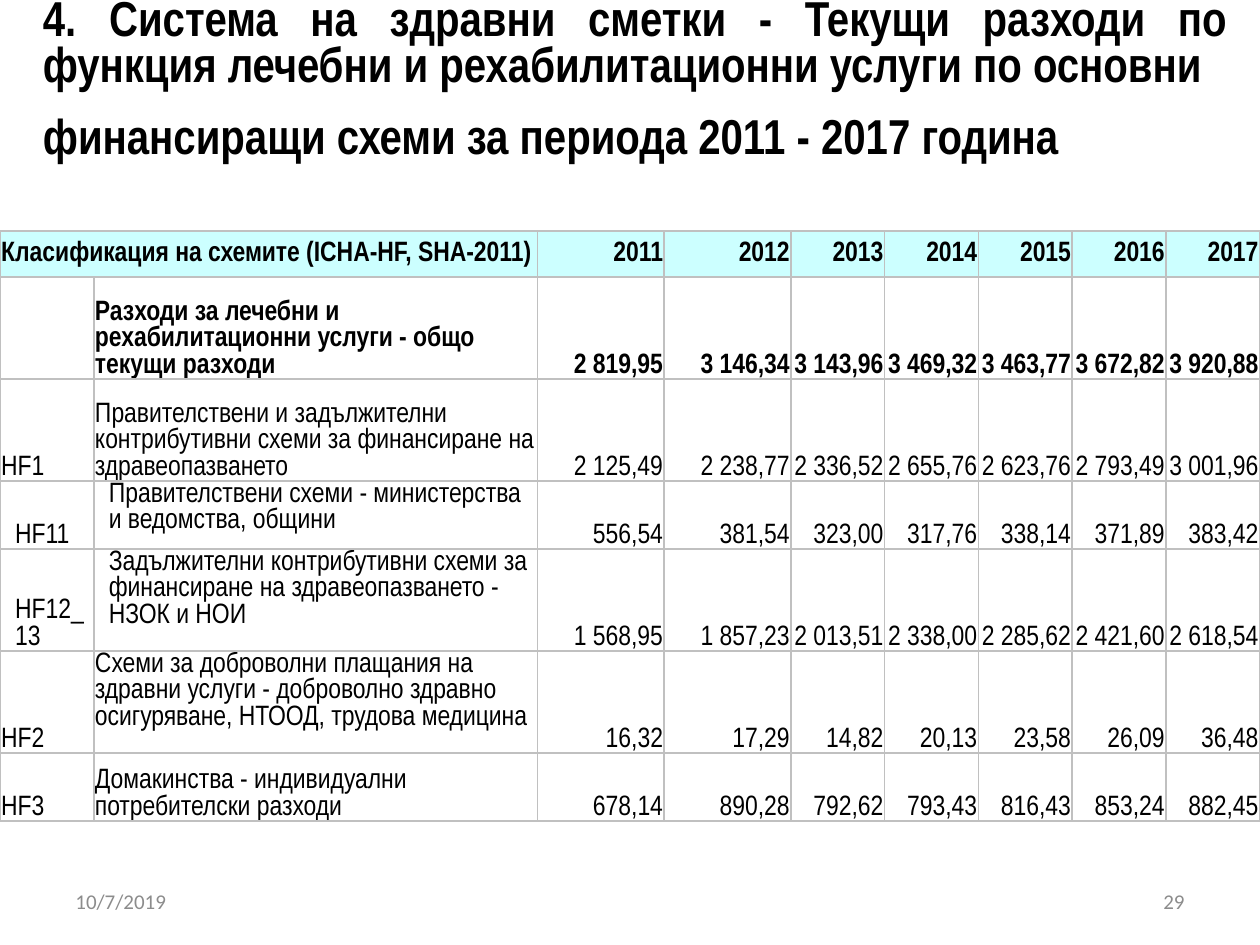
import pptx
import pptx.dml.color
import pptx.enum.text
import pptx.oxml
import pptx.oxml.ns
import pptx.util
from dataclasses import dataclass

Pt = pptx.util.Pt
ALIGN = pptx.enum.text.PP_ALIGN
ANCHOR = pptx.enum.text.MSO_ANCHOR


@dataclass(frozen=True)
class Theme:
    ink: str = "000000"
    muted: str = "8C8C8C"
    header_fill: str = "CCFFFF"
    border: str = "C0C0C0"
    border_width: float = 1
    table_font: str = "Arial Narrow"
    footer_font: str = "Calibri"
    title_size: float = 28
    table_size: float = 16
    footer_size: float = 12


THEME = Theme()
CELL_INSETS = {
    "margin_left": Pt(0.72),
    "margin_top": Pt(0.72),
    "margin_right": Pt(0.72),
    "margin_bottom": Pt(0),
}
INDENT = Pt(8.64)

TITLE_LINES = [
    "4. Система на здравни сметки - Текущи разходи по функция лечебни и рехабилитационни услуги по основни ",
    "финансиращи схеми за периода 2011 - 2017 година",
]
TITLE_COLUMNS = [413, 96.5, 96.5, 72]
TITLE_ROWS = [67, 35, 35]

SCHEME_COLUMNS = [53.6, 253.6] + [72.4] * 2 + [53.6] * 5
SCHEME_ROWS = [26.3, 58.3, 58.3, 38.9, 58.3, 58.3, 38.9]
HEADER = ["Класификация на схемите (ICHA-HF, SHA-2011)", "",
          "2011", "2012", "2013", "2014", "2015", "2016", "2017"]
SCHEMES = [
    ["", "Разходи за лечебни и рехабилитационни услуги - общо текущи разходи",
     "2 819,95", "3 146,34", "3 143,96", "3 469,32", "3 463,77", "3 672,82", "3 920,88"],
    ["HF1", "Правителствени и задължителни контрибутивни схеми за финансиране на здравеопазването",
     "2 125,49", "2 238,77", "2 336,52", "2 655,76", "2 623,76", "2 793,49", "3 001,96"],
    ["HF11", "Правителствени схеми - министерства и ведомства, общини",
     "556,54", "381,54", "323,00", "317,76", "338,14", "371,89", "383,42"],
    ["HF12_13", "Задължителни контрибутивни схеми за финансиране на здравеопазването - НЗОК и НОИ",
     "1 568,95", "1 857,23", "2 013,51", "2 338,00", "2 285,62", "2 421,60", "2 618,54"],
    ["HF2", "Схеми за доброволни плащания на здравни услуги - доброволно здравно осигуряване, НТООД, трудова медицина",
     "16,32", "17,29", "14,82", "20,13", "23,58", "26,09", "36,48"],
    ["HF3", "Домакинства - индивидуални потребителски разходи",
     "678,14", "890,28", "792,62", "793,43", "816,43", "853,24", "882,45"],
]
SUBSCHEMES = {"HF11", "HF12_13"}
TOP_ALIGNED_NAMES = SUBSCHEMES | {"HF2"}


def set_attributes(target, values):
    for name, value in values.items():
        setattr(target, name, value)


def write_text(frame, text, align, font, size, color, bold=False):
    para = frame.paragraphs[0]
    para.alignment = align
    if text:
        span = para.add_run()
        span.text = text
        set_attributes(span.font, {"name": font, "size": Pt(size), "bold": bold})
        span.font.color.rgb = pptx.dml.color.RGBColor.from_string(color)


def add_plain_table(page, left, top, columns, rows):
    frame = page.shapes.add_table(
        len(rows), len(columns), Pt(left), Pt(top), Pt(sum(columns)), Pt(sum(rows))
    )
    table = frame.table
    set_attributes(table, {"first_row": False, "horz_banding": False})
    for column, width in zip(table.columns, columns):
        column.width = Pt(width)
    for row, height in zip(table.rows, rows):
        row.height = Pt(height)
    for cell in table.iter_cells():
        cell.fill.background()
        set_attributes(cell, CELL_INSETS)
    return table


def add_borders(cell):
    properties = cell._tc.get_or_add_tcPr()
    for position, side in enumerate(("lnL", "lnR", "lnT", "lnB")):
        line = pptx.oxml.parse_xml(
            f'<a:{side} {pptx.oxml.ns.nsdecls("a")} w="{Pt(THEME.border_width)}">'
            f'<a:solidFill><a:srgbClr val="{THEME.border}"/></a:solidFill></a:{side}>'
        )
        properties.insert(position, line)


def add_title_table(page):
    table = add_plain_table(page, 23.8, 0, TITLE_COLUMNS, TITLE_ROWS)
    table.cell(0, 0).merge(table.cell(0, 3))
    table.cell(1, 0).merge(table.cell(1, 2))
    for row, line in enumerate(TITLE_LINES):
        write_text(table.cell(row, 0).text_frame, line, ALIGN.JUSTIFY,
                   THEME.table_font, THEME.title_size, THEME.ink, True)


def add_scheme_table(page):
    table = add_plain_table(page, 0, 132, SCHEME_COLUMNS, SCHEME_ROWS)
    table.cell(0, 0).merge(table.cell(0, 1))
    for row, values in enumerate([HEADER] + SCHEMES):
        code = values[0]
        for column, text in enumerate(values):
            cell = table.cell(row, column)
            add_borders(cell)
            cell.vertical_anchor = ANCHOR.BOTTOM
            if row == 0:
                cell.vertical_anchor = ANCHOR.MIDDLE
                cell.fill.solid()
                cell.fill.fore_color.rgb = pptx.dml.color.RGBColor.from_string(THEME.header_fill)
            elif column == 1 and code in TOP_ALIGNED_NAMES:
                cell.vertical_anchor = ANCHOR.TOP
            if column < 2 and code in SUBSCHEMES:
                cell.margin_left = INDENT
            write_text(cell.text_frame, text, ALIGN.LEFT if column < 2 else ALIGN.RIGHT,
                       THEME.table_font, THEME.table_size, THEME.ink, row < 2)


def add_footer(page, left, text, align):
    box = page.shapes.add_textbox(Pt(left), Pt(500.5), Pt(168), Pt(28.8))
    set_attributes(box.text_frame, {"word_wrap": True, "vertical_anchor": ANCHOR.MIDDLE})
    write_text(box.text_frame, text, align, THEME.footer_font, THEME.footer_size, THEME.muted)


def main():
    deck = pptx.Presentation()
    set_attributes(deck, {"slide_width": Pt(720), "slide_height": Pt(540)})
    page = deck.slides.add_slide(deck.slide_layouts[6])
    add_title_table(page)
    add_scheme_table(page)
    add_footer(page, 36, "10/7/2019", ALIGN.LEFT)
    add_footer(page, 516, "29", ALIGN.RIGHT)
    deck.save("out.pptx")


if __name__ == "__main__":
    main()
